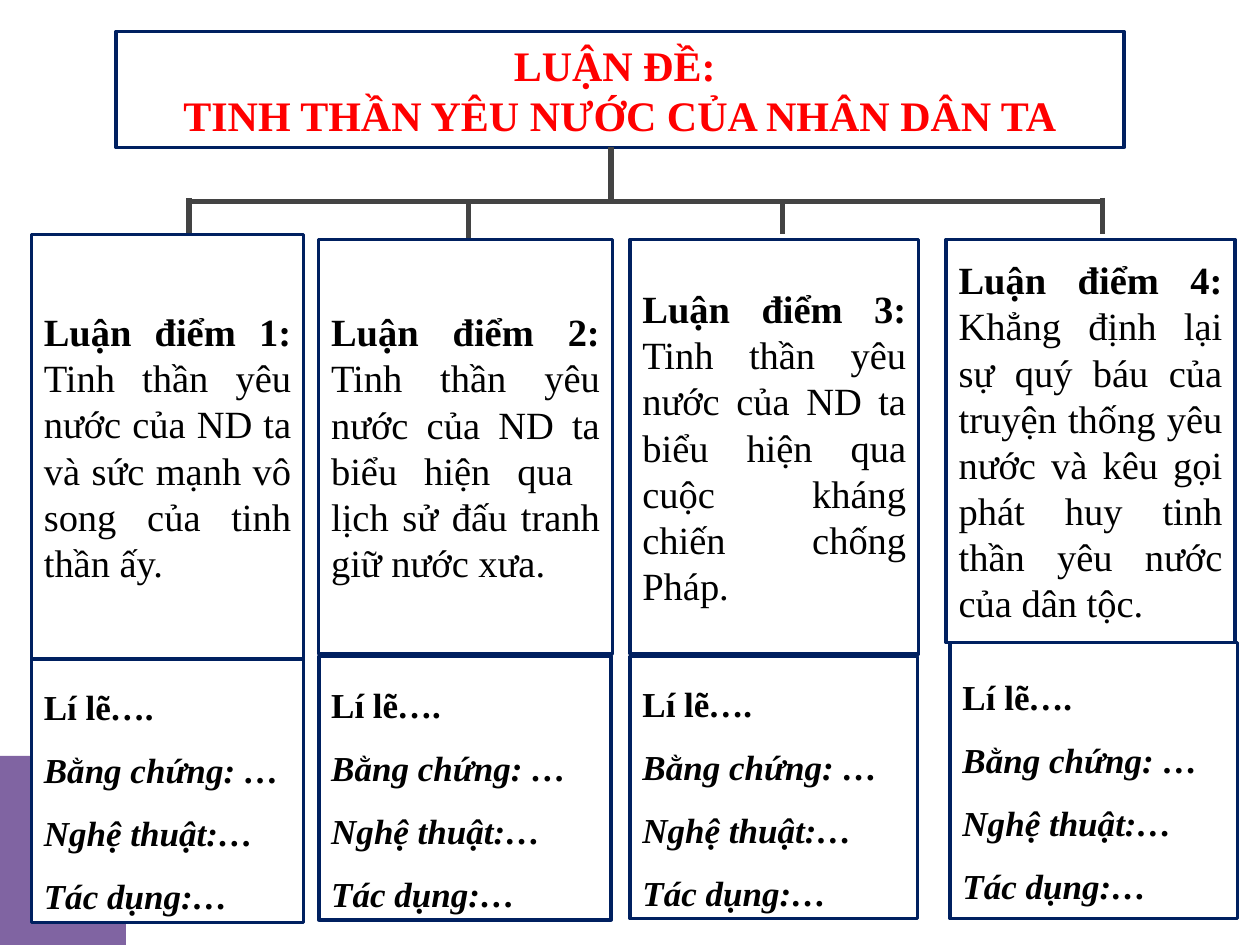
"""Builds the argument map: one thesis, four points and their evidence boxes."""
from pptx import Presentation
from pptx.dml.color import RGBColor
from pptx.enum.shapes import MSO_CONNECTOR, MSO_SHAPE
from pptx.enum.text import MSO_ANCHOR, MSO_AUTO_SIZE, PP_ALIGN
from pptx.oxml import parse_xml
from pptx.oxml.ns import nsdecls
from pptx.util import Inches, Pt

NAVY = RGBColor(0x00, 0x20, 0x60)
RED = RGBColor(0xFF, 0x00, 0x00)
GREY = RGBColor(0x43, 0x43, 0x43)
PURPLE = RGBColor(0x80, 0x64, 0xA2)
WHITE = RGBColor(0xFF, 0xFF, 0xFF)
BLACK = RGBColor(0x00, 0x00, 0x00)
FONT = "Times New Roman"

THESIS = ["LUẬN ĐỀ: ", "TINH THẦN YÊU NƯỚC CỦA NHÂN DÂN TA"]
POINTS = [
    "Tinh thần yêu nước của ND ta và sức mạnh vô song của tinh thần ấy.",
    "Tinh thần yêu nước của ND ta biểu hiện qua  lịch sử đấu tranh giữ nước xưa.",
    "Tinh thần yêu nước của ND ta biểu hiện qua cuộc kháng chiến chống Pháp.",
    "Khẳng định lại sự quý báu của truyện thống yêu nước và kêu gọi phát huy "
    "tinh thần yêu nước của dân tộc.",
]
PROOF = [
    [("Lí lẽ", False), ("….", True)],
    [("Bằng chứng: …", True)],
    [("Nghệ thuật:…", True)],
    [("Tác dụng:…", True)],
]
POINT_BOX = [(0.25, 1.86, 2.16, 3.37), (2.53, 1.9, 2.33, 3.29),
             (5, 1.9, 2.29, 3.29), (7.51, 1.9, 2.29, 3.2)]
PROOF_BOX = [(0.25, 5.23, 2.16, 2.09), (2.53, 5.21, 2.32, 2.09),
             (5, 5.21, 2.28, 2.08), (7.54, 5.1, 2.28, 2.19)]
BAR, TRUNK = 1.6, 4.85
DROPS = [(1.5, 1.57, 1.86), (3.72, 1.59, 1.89),
         (6.21, 1.6, 1.86), (8.75, 1.57, 1.86)]
START = (0.87, 6.69)
CURVES = [
    ((0.88, 6.69), (0.88, 6.7), (0.89, 6.71)),
    ((1.02, 6.81), (1.14, 6.96), (1.13, 7.11)),
    ((1.12, 7.2), (1.07, 7.28), (1.02, 7.34)),
    ((0.79, 7.62), (0.15, 8.16), (-0.29, 7.84)),
    ((-0.29, 7.84), (-0.29, 7.83), (-0.3, 7.83)),
    ((-0.38, 7.77), (-0.43, 7.67), (-0.46, 7.58)),
    ((-0.54, 7.28), (-0.45, 6.94), (-0.34, 6.69)),
    ((-0.19, 6.37), (0.17, 6.36), (0.5, 6.48)),
    ((0.63, 6.53), (0.76, 6.61), (0.87, 6.69)),
]


def put(item, vals):
    for key, val in vals.items():
        setattr(item, key, val)


def paint(shape, fill, edge=None):
    shape.fill.solid()
    shape.fill.fore_color.rgb = fill
    if edge is None:
        shape.line.fill.background()
    else:
        shape.line.color.rgb = edge
        shape.line.width = Pt(2)


def write(shape, rows, form, size, color):
    frame = shape.text_frame
    put(frame, {"word_wrap": True, "auto_size": MSO_AUTO_SIZE.NONE,
                "vertical_anchor": MSO_ANCHOR.MIDDLE})
    for num, row in enumerate(rows):
        para = frame.add_paragraph() if num else frame.paragraphs[0]
        put(para, form)
        for text, bold, slant in row:
            run = para.add_run()
            run.text = text
            put(run.font, {"name": FONT, "size": Pt(size),
                           "bold": bold, "italic": slant})
            run.font.color.rgb = color


def box(slide, area, rows, form, size):
    shape = slide.shapes.add_shape(MSO_SHAPE.ROUNDED_RECTANGLE,
                                   *map(Inches, area))
    shape.adjustments[0] = 0
    shape.shadow.inherit = False
    paint(shape, WHITE, NAVY)
    write(shape, rows, form, size, BLACK)


def link(slide, *ends):
    line = slide.shapes.add_connector(MSO_CONNECTOR.STRAIGHT,
                                      *map(Inches, ends))
    line.line.color.rgb = GREY
    line.line.width = Pt(3)
    line._element.spPr.append(parse_xml(f"<a:effectLst {nsdecls('a')}/>"))


def trace(start, curves, steps=10):
    spots = []
    for one, two, end in curves:
        for num in range(1, steps + 1):
            t = num / steps
            u = 1 - t
            spots.append(tuple(
                u**3 * a + 3 * u * u * t * b + 3 * u * t * t * c + t**3 * d
                for a, b, c, d in zip(start, one, two, end)))
        start = end
    return spots


def blob(slide):
    pen = slide.shapes.build_freeform(*START, scale=Inches(1))
    pen.add_line_segments(trace(START, CURVES), close=True)
    shape = pen.convert_to_shape()
    shape.shadow.inherit = False
    paint(shape, PURPLE)


def head(slide):
    title = slide.shapes.title
    put(title, {"left": Inches(0.92), "top": Inches(0.25),
                "width": Inches(8), "height": Inches(0.92)})
    title._element.spPr.append(parse_xml(
        f'<a:prstGeom {nsdecls("a")} prst="roundRect"><a:avLst/></a:prstGeom>'))
    paint(title, WHITE, NAVY)
    write(title, [[(text, True, False)] for text in THESIS],
          {"alignment": PP_ALIGN.CENTER}, 24, RED)


def main():
    deck = Presentation()
    put(deck, {"slide_width": Inches(10), "slide_height": Inches(7.5)})
    slide = deck.slides.add_slide(deck.slide_layouts[5])
    blob(slide)
    head(slide)
    link(slide, DROPS[0][0], BAR, DROPS[-1][0], BAR)
    link(slide, TRUNK, 1.17, TRUNK, BAR)
    for x, top, end in DROPS:
        link(slide, x, top, x, end)
    proof = [[(text, True, slant) for text, slant in row] for row in PROOF]
    for num, text in enumerate(POINTS):
        rows = [[(f"Luận điểm {num + 1}: ", True, False), (text, False, False)]]
        box(slide, POINT_BOX[num], rows, {"alignment": PP_ALIGN.JUSTIFY}, 22)
        box(slide, PROOF_BOX[num], proof,
            {"alignment": PP_ALIGN.LEFT, "line_spacing": 1.5}, 20)
    deck.save("out.pptx")


if __name__ == "__main__":
    main()
